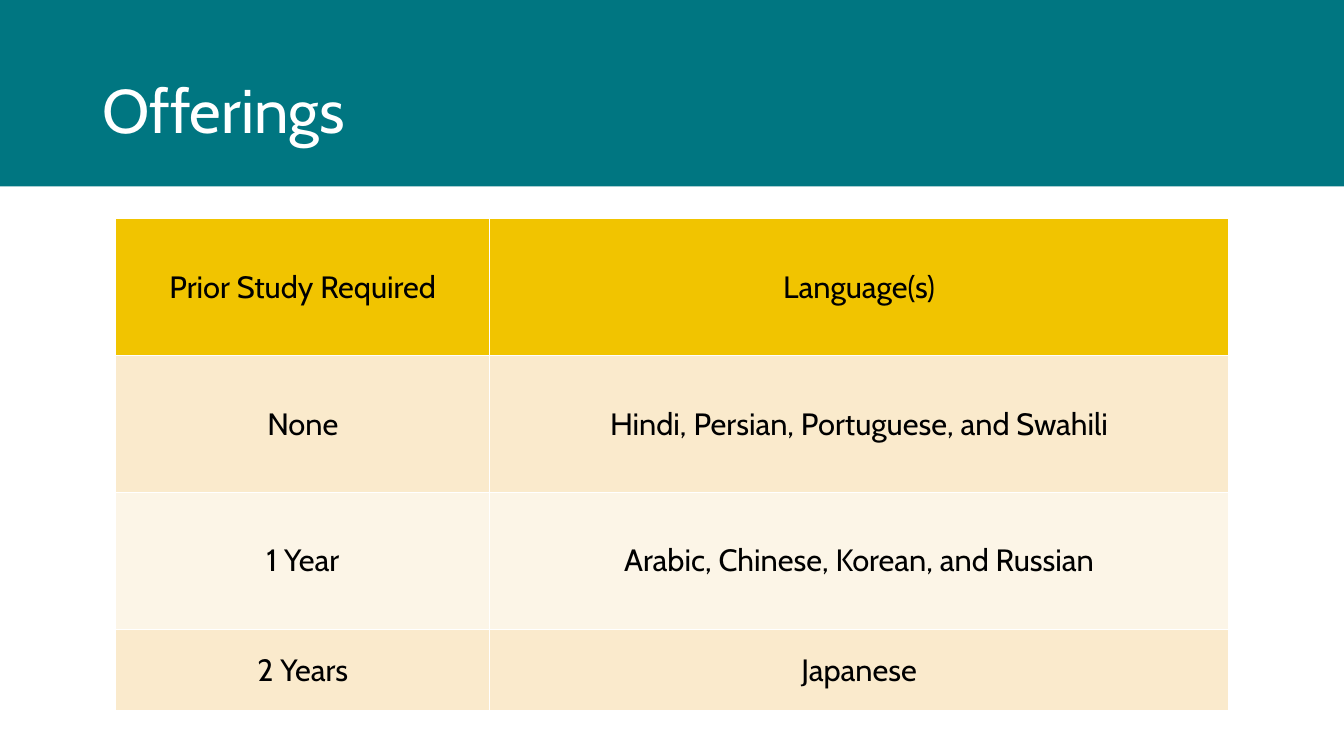
from pptx import Presentation
from pptx.dml.color import RGBColor
from pptx.enum.shapes import MSO_SHAPE
from pptx.enum.text import MSO_ANCHOR, PP_ALIGN
from pptx.oxml.ns import qn
from pptx.util import Cm, Pt
from lxml.etree import SubElement


def color(value):
    return RGBColor.from_string(value)


class SlideBuilder:
    """Hold the deck style and the current slide, and add elements to it."""

    font = "Cabin"
    teal, gold, white, black = "007681", "F1C400", "FFFFFF", "000000"
    bands = ("FAEACC", "FCF5E7")

    def __init__(self, slide):
        self.slide = slide

    def add_run(self, paragraph, text, size, text_color):
        run = paragraph.add_run()
        run.text = text
        run.font.name = self.font
        run.font.size = Pt(size)
        run.font.color.rgb = color(text_color)

    def add_banner(self, width, height):
        shape = self.slide.shapes.add_shape(MSO_SHAPE.RECTANGLE, 0, 0, width, height)
        shape.shadow.inherit = False
        shape.fill.solid()
        shape.fill.fore_color.rgb = color(self.teal)
        shape.line.fill.background()

    def add_title(self, text, left, top, width, height):
        shape = self.slide.shapes.add_textbox(left, top, width, height)
        frame = shape.text_frame
        frame.word_wrap = True
        frame.vertical_anchor = MSO_ANCHOR.MIDDLE
        paragraph = frame.paragraphs[0]
        paragraph.line_spacing = 0.9
        self.add_run(paragraph, text, 44, self.white)

    def add_borders(self, cell):
        properties = cell._tc.get_or_add_tcPr()
        for side in ("a:lnL", "a:lnR", "a:lnT", "a:lnB"):
            line = SubElement(properties, qn(side), w=str(Pt(1)))
            fill = SubElement(line, qn("a:solidFill"))
            SubElement(fill, qn("a:srgbClr"), val=self.white)

    def fill_cell(self, cell, text, fill_color):
        cell.margin_left = cell.margin_right = Cm(0.3)
        cell.margin_top = cell.margin_bottom = Cm(0.15)
        cell.vertical_anchor = MSO_ANCHOR.MIDDLE
        self.add_borders(cell)
        cell.fill.solid()
        cell.fill.fore_color.rgb = color(fill_color)
        paragraph = cell.text_frame.paragraphs[0]
        paragraph.alignment = PP_ALIGN.CENTER
        self.add_run(paragraph, text, 22, self.black)

    def add_table(self, rows, left, top, widths, heights):
        table = self.slide.shapes.add_table(
            len(rows), len(widths), left, top, sum(widths), sum(heights)
        ).table
        for column, width in zip(table.columns, widths):
            column.width = width
        for index, (row, height, texts) in enumerate(zip(table.rows, heights, rows)):
            row.height = height
            fill_color = self.bands[(index - 1) % 2] if index else self.gold
            for cell, text in zip(row.cells, texts):
                self.fill_cell(cell, text, fill_color)


def main():
    presentation = Presentation()
    presentation.slide_width = Cm(33.87)
    presentation.slide_height = Cm(19.05)
    builder = SlideBuilder(presentation.slides.add_slide(presentation.slide_layouts[6]))

    builder.add_banner(presentation.slide_width, Cm(4.7))
    builder.add_title("Offerings", Cm(2.33), Cm(1.02), Cm(29.21), Cm(3.68))
    offerings = [
        ("Prior Study Required", "Language(s)"),
        ("None", "Hindi, Persian, Portuguese, and Swahili"),
        ("1 Year", "Arabic, Chinese, Korean, and Russian"),
        ("2 Years", "Japanese"),
    ]
    builder.add_table(
        offerings,
        Cm(2.92),
        Cm(5.51),
        widths=[Cm(9.42), Cm(18.62)],
        heights=[Cm(3.45)] * 3 + [Cm(2.05)],
    )
    presentation.save("out.pptx")


if __name__ == "__main__":
    main()
